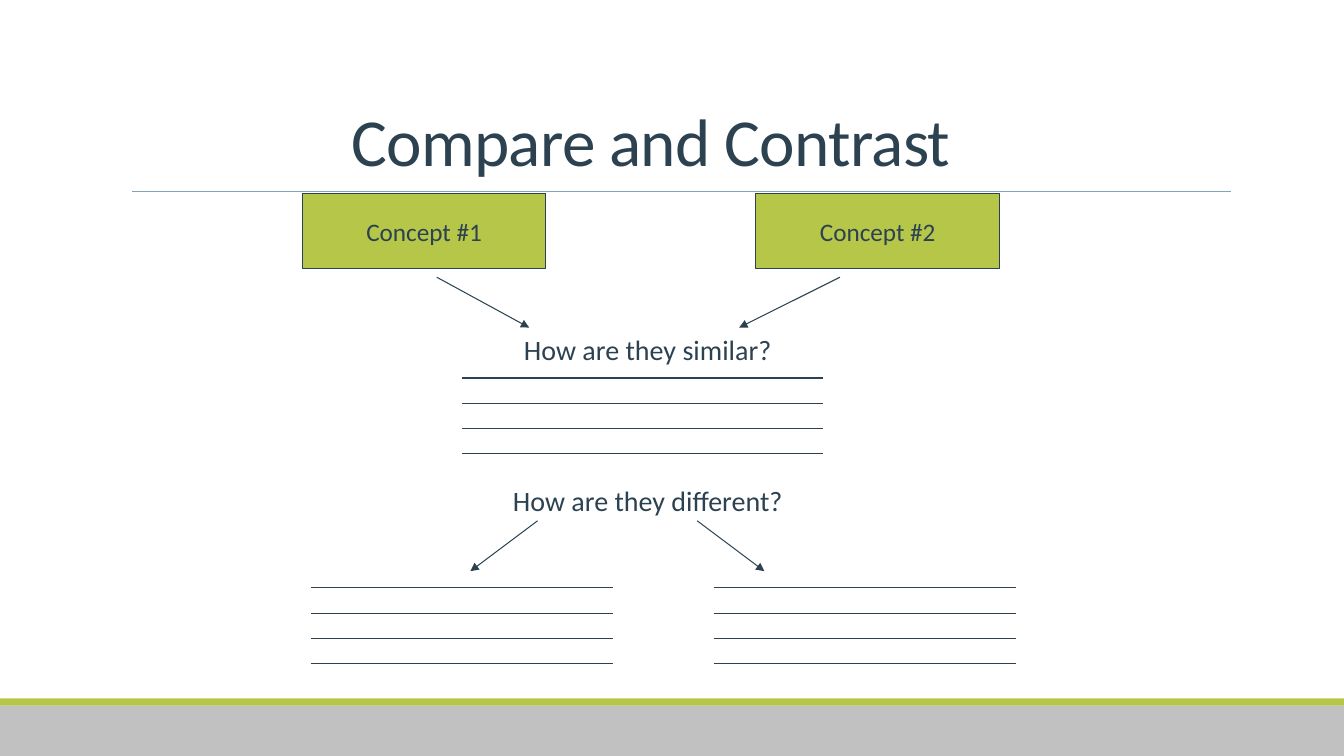
from dataclasses import dataclass
from typing import Any

from lxml.etree import SubElement
from pptx import Presentation
from pptx.dml.color import RGBColor
from pptx.enum.shapes import MSO_CONNECTOR, MSO_SHAPE
from pptx.enum.text import MSO_ANCHOR, MSO_AUTO_SIZE, PP_ALIGN
from pptx.oxml.ns import qn
from pptx.util import Emu, Inches, Pt

NAVY = RGBColor(0x2C, 0x42, 0x51)
LIME = RGBColor(0xB6, 0xC6, 0x49)
SILVER = RGBColor(0xC1, 0xC1, 0xC1)
STEEL = RGBColor(0x82, 0xA4, 0xBB)

COLUMNS, ROWS = 160, 90
CELL = Inches(1) // 12
ANSWER_LINES, ANSWER_SPACING = 4, 3

TITLE_FRAME = {
    "vertical_anchor": MSO_ANCHOR.BOTTOM,
    "auto_size": MSO_AUTO_SIZE.NONE,
    "word_wrap": True,
}
CONCEPT_FRAME = {"vertical_anchor": MSO_ANCHOR.MIDDLE, "word_wrap": False}
QUESTION_FRAME = {"auto_size": MSO_AUTO_SIZE.SHAPE_TO_FIT_TEXT, "word_wrap": True}


@dataclass(frozen=True)
class Area:
    column: float
    row: float
    columns: float
    rows: float

    def lengths(self) -> tuple[Emu, ...]:
        return tuple(map(grid, (self.column, self.row, self.columns, self.rows)))


@dataclass(frozen=True)
class Label:
    wording: str
    area: Area


@dataclass(frozen=True)
class Stroke:
    start: tuple[float, float]
    end: tuple[float, float]
    color: RGBColor = NAVY
    points: float = 0.75
    arrow: bool = False


@dataclass(frozen=True)
class AnswerSpace:
    column: float
    row: float
    columns: float


BANDS = [
    (Area(0, 84, COLUMNS, 6), SILVER),
    (Area(0, 83.16, COLUMNS, 0.84), LIME),
]
TITLE = Label("Compare and Contrast", Area(32, 10, 91, 12))
TITLE_RULE = Stroke((15.72, 22.8), (146.52, 22.8), STEEL, 0.5)
CONCEPTS = [
    Label(f"Concept #{number}", Area(column, 23, 29, 9))
    for number, column in enumerate((36, 90), 1)
]
QUESTIONS = [
    Label("How are they similar?", Area(56, 39, 42.24, 5.2)),
    Label("How are they different?", Area(56, 57, 42.24, 5.2)),
]
ARROWS = [
    Stroke((52, 33), (63, 39), arrow=True),
    Stroke((100, 33), (88, 39), arrow=True),
    Stroke((64, 62), (56, 68), arrow=True),
    Stroke((83, 62), (91, 68), arrow=True),
]
ANSWER_SPACES = [
    AnswerSpace(55, 45, 43),
    AnswerSpace(37, 70, 36),
    AnswerSpace(85, 70, 36),
]


def grid(cells: float) -> Emu:
    return Emu(round(cells * CELL))


def apply_format(target: Any, values: dict[str, Any]) -> None:
    for attribute, value in values.items():
        setattr(target, attribute, value)


def write(shape: Any, wording: str, points: float, frame_format: dict[str, Any]) -> Any:
    frame = shape.text_frame
    apply_format(frame, frame_format)
    paragraph = frame.paragraphs[0]
    paragraph.alignment = PP_ALIGN.CENTER
    run = paragraph.add_run()
    run.text = wording
    apply_format(run.font, {"name": "Calibri", "size": Pt(points)})
    run.font.color.rgb = NAVY
    return run


def draw_block(slide: Any, area: Area, fill: RGBColor) -> Any:
    block = slide.shapes.add_shape(MSO_SHAPE.RECTANGLE, *area.lengths())
    block.shadow.inherit = False
    block.fill.solid()
    block.fill.fore_color.rgb = fill
    block.line.fill.background()
    return block


def draw_stroke(shapes: Any, stroke: Stroke) -> None:
    ends = map(grid, stroke.start + stroke.end)
    connector = shapes.add_connector(MSO_CONNECTOR.STRAIGHT, *ends)
    connector.line.color.rgb = stroke.color
    connector.line.width = Pt(stroke.points)
    properties = connector._element.spPr
    if stroke.arrow:
        SubElement(properties.find(qn("a:ln")), qn("a:tailEnd"), type="triangle")
    SubElement(properties, qn("a:effectLst"))


def draw_title(slide: Any) -> None:
    heading = slide.shapes.title
    position = zip(("left", "top", "width", "height"), TITLE.area.lengths())
    apply_format(heading, dict(position))
    run = write(heading, TITLE.wording, 48, TITLE_FRAME)
    heading.text_frame.paragraphs[0].line_spacing = 0.85
    run.font._element.set("spc", "-50")


def draw_concept(slide: Any, concept: Label) -> None:
    block = draw_block(slide, concept.area, LIME)
    block.line.color.rgb = NAVY
    block.line.width = Pt(0.75)
    write(block, concept.wording, 18, CONCEPT_FRAME)


def draw_question(slide: Any, question: Label) -> None:
    box = slide.shapes.add_textbox(*question.area.lengths())
    write(box, question.wording, 20, QUESTION_FRAME)


def draw_answer_space(slide: Any, space: AnswerSpace) -> None:
    group = slide.shapes.add_group_shape()
    for index in range(ANSWER_LINES):
        row = space.row + index * ANSWER_SPACING
        end = (space.column + space.columns, row)
        draw_stroke(group.shapes, Stroke((space.column, row), end))


def main() -> None:
    presentation = Presentation()
    presentation.slide_width = grid(COLUMNS)
    presentation.slide_height = grid(ROWS)
    slide = presentation.slides.add_slide(presentation.slide_layouts[5])
    for area, fill in BANDS:
        draw_block(slide, area, fill)
    draw_stroke(slide.shapes, TITLE_RULE)
    draw_title(slide)
    for concept in CONCEPTS:
        draw_concept(slide, concept)
    for question in QUESTIONS:
        draw_question(slide, question)
    for arrow in ARROWS:
        draw_stroke(slide.shapes, arrow)
    for space in ANSWER_SPACES:
        draw_answer_space(slide, space)
    presentation.save("out.pptx")


if __name__ == "__main__":
    main()
